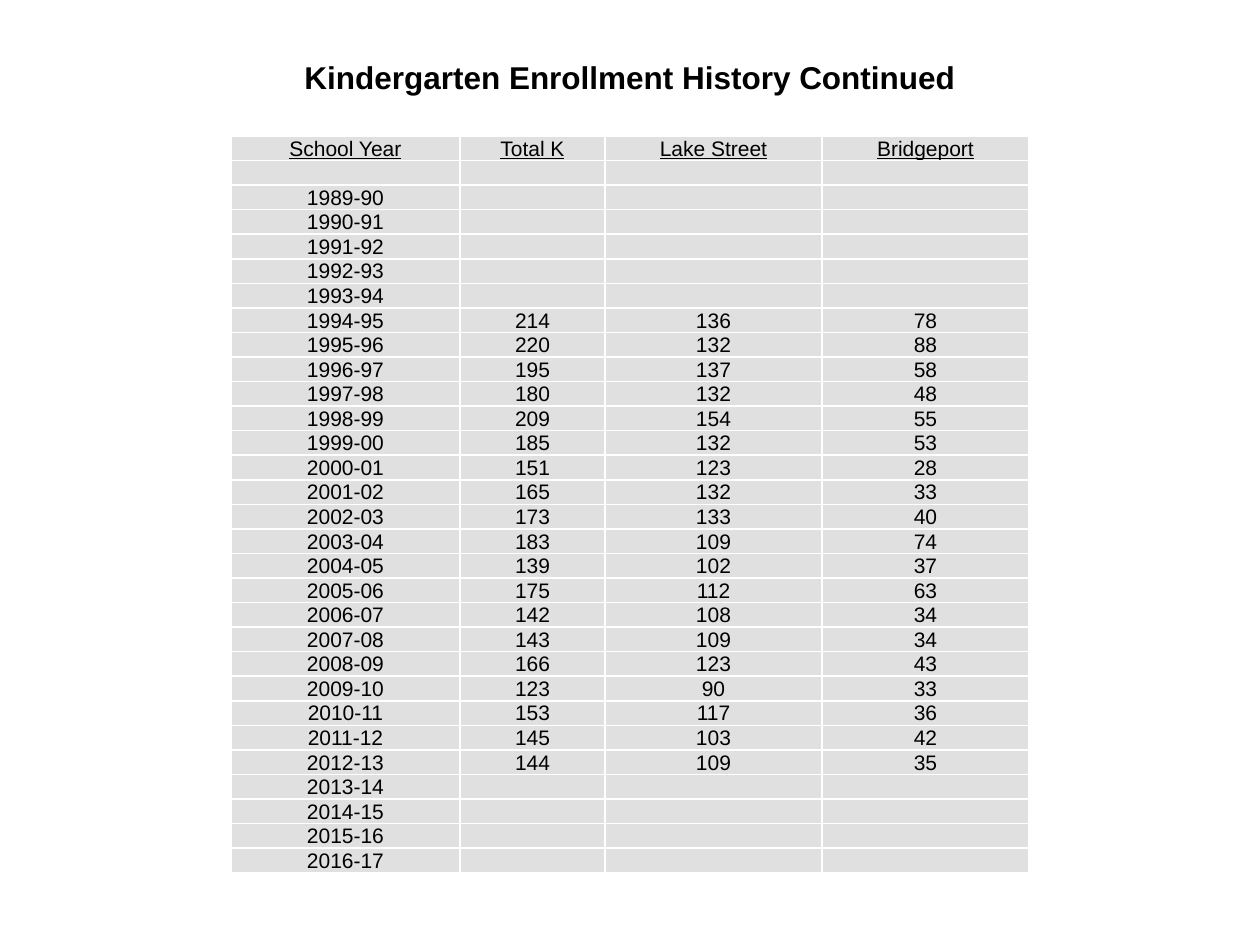
from dataclasses import dataclass

from lxml.etree import SubElement
from pptx import Presentation
from pptx.dml.color import RGBColor
from pptx.enum.text import MSO_ANCHOR, PP_ALIGN
from pptx.oxml.ns import qn


@dataclass(frozen=True)
class Theme:
    """Colours and type of the slide."""
    face: str = "Arial"
    ink: str = "000000"
    cell: str = "E1E0E0"
    rule: str = "FFFFFF"
    rule_pt: int = 1
    title_pt: int = 18
    body_pt: int = 12


THEME = Theme()
HEADS = ["School Year", "Total K", "Lake Street", "Bridgeport"]
WIDTHS = [229, 145, 217, 207]
ROW = 23
FIRST, LAST = 1989, 2016
COUNTED = 1994
LAKE = [136, 132, 137, 132, 154, 132, 123, 132, 133, 109,
        102, 112, 108, 109, 123, 90, 117, 103, 109]
BRIDGE = [78, 88, 58, 48, 55, 53, 28, 33, 40, 74,
          37, 63, 34, 34, 43, 33, 36, 42, 35]


def px(n):
    """Turn pixels into EMU."""
    return round(n * 914400 / 126)


def pt(n):
    """Turn points into EMU."""
    return n * 12700


def style(para, size, bold=False, line=False):
    """Centre a paragraph and set its font."""
    para.alignment = PP_ALIGN.CENTER
    font = para.font
    font.name, font.size = THEME.face, pt(size)
    font.bold, font.underline = bold, line
    font.color.rgb = RGBColor.from_string(THEME.ink)


def add_title(slide, text):
    """Place and format the title."""
    title = slide.shapes.title
    title.left, title.top, title.width, title.height = map(px, (63, 38, 1134, 78))
    frame = title.text_frame
    frame.text = text
    frame.vertical_anchor = MSO_ANCHOR.MIDDLE
    style(frame.paragraphs[0], THEME.title_pt, bold=True)


def add_rules(cell):
    """Draw the four borders of a cell."""
    props = cell._tc.get_or_add_tcPr()
    for side in ("a:lnL", "a:lnR", "a:lnT", "a:lnB"):
        line = SubElement(props, qn(side), w=str(pt(THEME.rule_pt)))
        fill = SubElement(line, qn("a:solidFill"))
        SubElement(fill, qn("a:srgbClr"), val=THEME.rule)


def fill_cell(cell, text, head):
    """Write and format one cell."""
    cell.text = text
    cell.vertical_anchor = MSO_ANCHOR.BOTTOM
    cell.margin_left = cell.margin_right = cell.margin_top = px(1)
    cell.margin_bottom = 0
    add_rules(cell)
    cell.fill.solid()
    cell.fill.fore_color.rgb = RGBColor.from_string(THEME.cell)
    para = cell.text_frame.paragraphs[0]
    style(para, THEME.body_pt, line=head)
    if not text:
        SubElement(para._p, qn("a:endParaRPr"), sz=str(THEME.body_pt * 100))


def get_rows():
    """List the table rows, with totals summed from both schools."""
    counts = {COUNTED + i: (a + b, a, b)
              for i, (a, b) in enumerate(zip(LAKE, BRIDGE))}
    rows = [HEADS, [""] * 4]
    for year in range(FIRST, LAST + 1):
        span = f"{year}-{(year + 1) % 100:02}"
        rows.append([span, *map(str, counts.get(year, [""] * 3))])
    return rows


def add_grid(slide, rows):
    """Add the enrollment table."""
    shape = slide.shapes.add_table(len(rows), len(HEADS), px(231), px(136),
                                   px(sum(WIDTHS)), px(ROW * len(rows)))
    table = shape.table
    table.first_row = table.horz_banding = False
    for col, width in zip(table.columns, WIDTHS):
        col.width = px(width)
    for r, row in enumerate(rows):
        table.rows[r].height = px(ROW)
        for c, text in enumerate(row):
            fill_cell(table.cell(r, c), text, head=r == 0)
    shape.height = px(786)


def main():
    """Build and save the slide."""
    deck = Presentation()
    deck.slide_width, deck.slide_height = px(1260), px(945)
    slide = deck.slides.add_slide(deck.slide_layouts[5])
    add_title(slide, "Kindergarten Enrollment History Continued")
    add_grid(slide, get_rows())
    deck.save("out.pptx")


if __name__ == "__main__":
    main()
